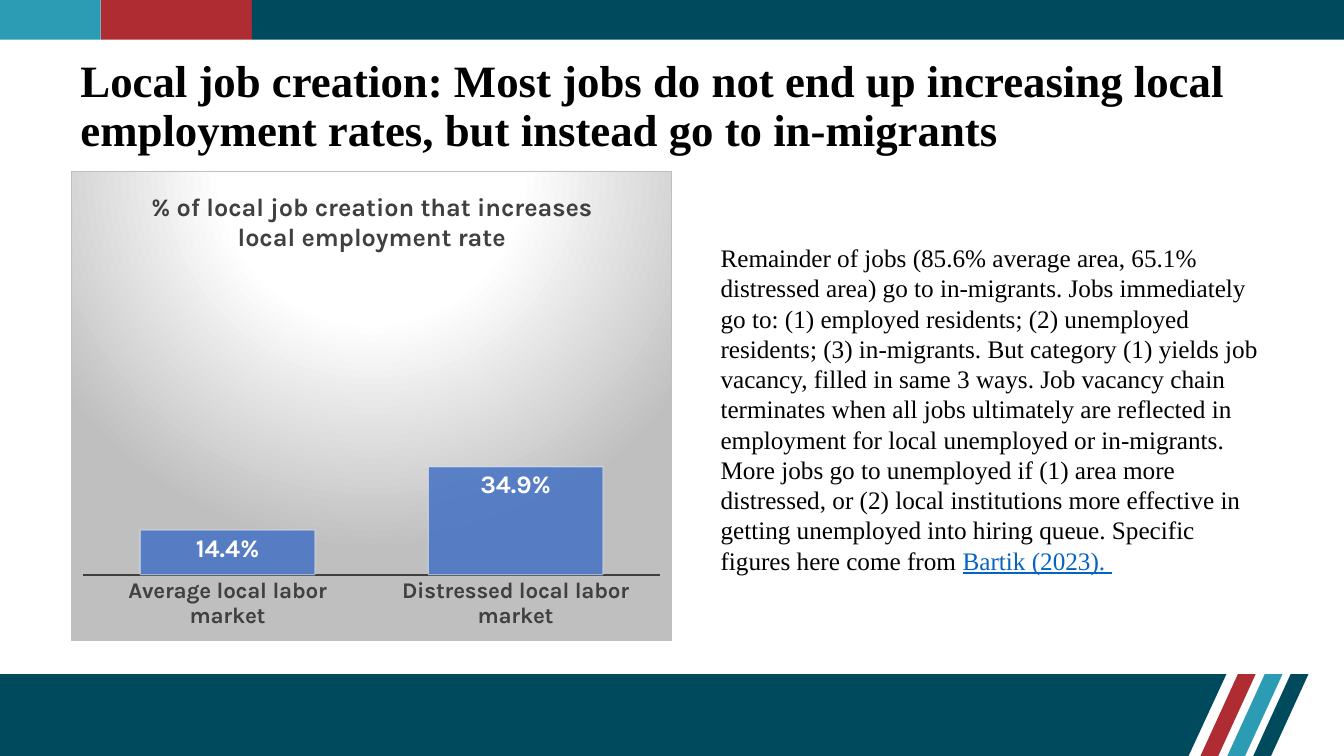
from dataclasses import dataclass

from lxml import etree
from pptx import Presentation
from pptx.chart.chart import Chart
from pptx.chart.data import CategoryChartData
from pptx.dml.color import RGBColor
from pptx.dml.fill import FillFormat
from pptx.enum.chart import XL_CHART_TYPE, XL_LABEL_POSITION, XL_TICK_MARK
from pptx.enum.shapes import MSO_SHAPE
from pptx.enum.text import MSO_ANCHOR
from pptx.oxml import parse_xml
from pptx.oxml.ns import qn
from pptx.shapes.base import BaseShape
from pptx.slide import Slide
from pptx.text.text import Font
from pptx.util import Pt

RECTANGLE = MSO_SHAPE.RECTANGLE
COLUMN_CLUSTERED = XL_CHART_TYPE.COLUMN_CLUSTERED
INSIDE_END = XL_LABEL_POSITION.INSIDE_END
NO_TICK = XL_TICK_MARK.NONE
MIDDLE = MSO_ANCHOR.MIDDLE

NAVY, RED, TEAL = "004A5E", "AF2C32", "2B9CB4"
BLACK, WHITE, GRAY, BLUE, LINK = "000000", "FFFFFF", "404040", "4472C4", "0563C1"
SERIF, SANS = "Times New Roman", "Karla"
PERCENT = "0.0%"
SLIDE_WIDTH, SLIDE_HEIGHT = 960, 540
HEADER_HEIGHT = 28.3
FOOTER_TOP = 481.6
STRIPE_WIDTH, STRIPE_SLANT = 12.7, 26.7

NAMESPACES = (
    'xmlns:c="http://schemas.openxmlformats.org/drawingml/2006/chart" '
    'xmlns:a="http://schemas.openxmlformats.org/drawingml/2006/main"'
)
CHART_BACKGROUND = f"""<c:spPr {NAMESPACES}>
<a:gradFill><a:gsLst>
<a:gs pos="0"><a:srgbClr val="FFFFFF"/></a:gs>
<a:gs pos="39000"><a:srgbClr val="FFFFFF"/></a:gs>
<a:gs pos="100000"><a:srgbClr val="BFBFBF"/></a:gs>
</a:gsLst><a:path path="circle">
<a:fillToRect l="50000" t="-80000" r="50000" b="180000"/>
</a:path></a:gradFill>
<a:ln w="9525"><a:solidFill><a:srgbClr val="BFBFBF"/></a:solidFill></a:ln>
</c:spPr>"""
PLOT_LAYOUT = f"""<c:layout {NAMESPACES}><c:manualLayout>
<c:layoutTarget val="inner"/><c:xMode val="edge"/><c:yMode val="edge"/>
<c:x val="0.02"/><c:y val="0.2"/><c:w val="0.96"/><c:h val="0.66"/>
</c:manualLayout></c:layout>"""


@dataclass
class Band:
    left: float
    width: float
    color: str


@dataclass
class Stripe:
    bottom_left: float
    color: str


@dataclass
class Phrase:
    text: str
    size: float
    color: str
    bold: bool = False
    underline: bool = False


@dataclass
class TextBox:
    left: float
    top: float
    width: float
    height: float
    line_spacing: float
    phrases: list[Phrase]


BANDS = [Band(72, 108, RED), Band(180, 780, NAVY), Band(0, 72, TEAL)]
STRIPES = [Stripe(857.5, RED), Stripe(876.7, TEAL), Stripe(895.2, NAVY)]
TITLE = TextBox(50.4, 50.4, 864, 52.6, 0.9, [
    Phrase("Local job creation: Most jobs do not end up increasing local "
           "employment rates, but instead go to in-migrants", 32, BLACK, bold=True),
])
EXPLANATION = TextBox(507.6, 168.5, 406.8, 247, 1.0, [
    Phrase("Remainder of jobs (85.6% average area, 65.1% distressed area) go to "
           "in-migrants. Jobs immediately go to: (1) employed residents; (2) unemployed "
           "residents; (3) in-migrants. But category (1) yields job vacancy, filled in "
           "same 3 ways. Job vacancy chain terminates when all jobs ultimately are "
           "reflected in employment for local unemployed or in-migrants. More jobs go to "
           "unemployed if (1) area more distressed, or (2) local institutions more "
           "effective in getting unemployed into hiring queue. Specific figures here "
           "come from ", 18, BLACK),
    Phrase("Bartik (2023). ", 18, LINK, underline=True),
])


def rgb(color: str) -> RGBColor:
    return RGBColor.from_string(color)


def style_font(font: Font, name: str, size: float, color: str, bold: bool) -> None:
    font.name = name
    font.size = Pt(size)
    font.bold = bold
    font.color.rgb = rgb(color)


def paint(shape: BaseShape, color: str) -> None:
    shape.shadow.inherit = False
    shape.fill.solid()
    shape.fill.fore_color.rgb = rgb(color)
    shape.line.fill.background()


def add_band(slide: Slide, band: Band) -> None:
    shape = slide.shapes.add_shape(
        RECTANGLE, Pt(band.left), 0, Pt(band.width), Pt(HEADER_HEIGHT))
    paint(shape, band.color)


def add_polygon(slide: Slide, points: list[tuple[float, float]], color: str) -> None:
    start, *others = [(Pt(x), Pt(y)) for x, y in points]
    builder = slide.shapes.build_freeform(*start)
    builder.add_line_segments(others, close=True)
    paint(builder.convert_to_shape(), color)


def add_stripe(slide: Slide, stripe: Stripe) -> None:
    left = stripe.bottom_left
    top_left = left + STRIPE_SLANT
    add_polygon(slide, [
        (left, SLIDE_HEIGHT), (top_left, FOOTER_TOP),
        (top_left + STRIPE_WIDTH, FOOTER_TOP), (left + STRIPE_WIDTH, SLIDE_HEIGHT),
    ], stripe.color)


def add_text(slide: Slide, box: TextBox) -> None:
    shape = slide.shapes.add_textbox(
        Pt(box.left), Pt(box.top), Pt(box.width), Pt(box.height))
    frame = shape.text_frame
    frame.word_wrap = True
    frame.vertical_anchor = MIDDLE
    paragraph = frame.paragraphs[0]
    paragraph.line_spacing = box.line_spacing
    for phrase in box.phrases:
        run = paragraph.add_run()
        run.text = phrase.text
        style_font(run.font, SERIF, phrase.size, phrase.color, phrase.bold)
        run.font.underline = phrase.underline


def set_translucent(fill: FillFormat, owner: etree.ElementBase, color: str, opacity: int) -> None:
    fill.solid()
    fill.fore_color.rgb = rgb(color)
    color_element = owner.find(qn("a:solidFill")).find(qn("a:srgbClr"))
    etree.SubElement(color_element, qn("a:alpha")).set("val", str(opacity * 1000))


def style_columns(chart: Chart) -> None:
    plot = chart.plots[0]
    plot.gap_width = 65
    plot.vary_by_categories = False
    series = plot.series[0]
    series.format.line.width = Pt(0.75)
    properties = next(chart.element.iter(qn("c:ser"))).find(qn("c:spPr"))
    set_translucent(series.format.fill, properties, BLUE, 85)
    set_translucent(series.format.line.fill, properties.find(qn("a:ln")), WHITE, 50)
    labels = series.data_labels
    labels.show_value = True
    labels.position = INSIDE_END
    labels.number_format = PERCENT
    labels.number_format_is_linked = False
    style_font(labels.font, SANS, 18, WHITE, True)


def style_axes(chart: Chart) -> None:
    category_axis = chart.category_axis
    category_axis.major_tick_mark = NO_TICK
    category_axis.format.line.width = Pt(1.5)
    category_axis.format.line.color.rgb = rgb(GRAY)
    style_font(category_axis.tick_labels.font, SANS, 16, GRAY, True)
    value_axis = chart.value_axis
    value_axis.minimum_scale = 0
    value_axis.maximum_scale = 1
    value_axis.has_major_gridlines = False
    value_axis.visible = False


def add_job_chart(slide: Slide) -> None:
    data = CategoryChartData(number_format=PERCENT)
    data.categories = ["Average local labor market", "Distressed local labor market"]
    data.add_series("Series 1", [0.144, 0.349])
    chart = slide.shapes.add_chart(
        COLUMN_CLUSTERED, Pt(50.7), Pt(122.2), Pt(429.5), Pt(335.7), data).chart
    style_font(chart.font, SANS, 10, BLACK, False)
    chart.has_legend = False
    run = chart.chart_title.text_frame.paragraphs[0].add_run()
    run.text = "% of local job creation that increases local employment rate"
    style_font(run.font, SANS, 18, GRAY, True)
    style_columns(chart)
    style_axes(chart)
    chart_element = chart.element.find(qn("c:chart"))
    chart_element.addnext(parse_xml(CHART_BACKGROUND))
    plot_area = chart_element.find(qn("c:plotArea"))
    for layout in plot_area.findall(qn("c:layout")):
        plot_area.remove(layout)
    plot_area.insert(0, parse_xml(PLOT_LAYOUT))


def main() -> None:
    presentation = Presentation()
    presentation.slide_width = Pt(SLIDE_WIDTH)
    presentation.slide_height = Pt(SLIDE_HEIGHT)
    slide = presentation.slides.add_slide(presentation.slide_layouts[6])
    add_polygon(slide, [(0, SLIDE_HEIGHT), (0, FOOTER_TOP), (876, FOOTER_TOP),
                        (849, SLIDE_HEIGHT)], NAVY)
    for stripe in STRIPES:
        add_stripe(slide, stripe)
    for band in BANDS:
        add_band(slide, band)
    add_text(slide, TITLE)
    add_job_chart(slide)
    add_text(slide, EXPLANATION)
    presentation.save("out.pptx")


if __name__ == "__main__":
    main()
